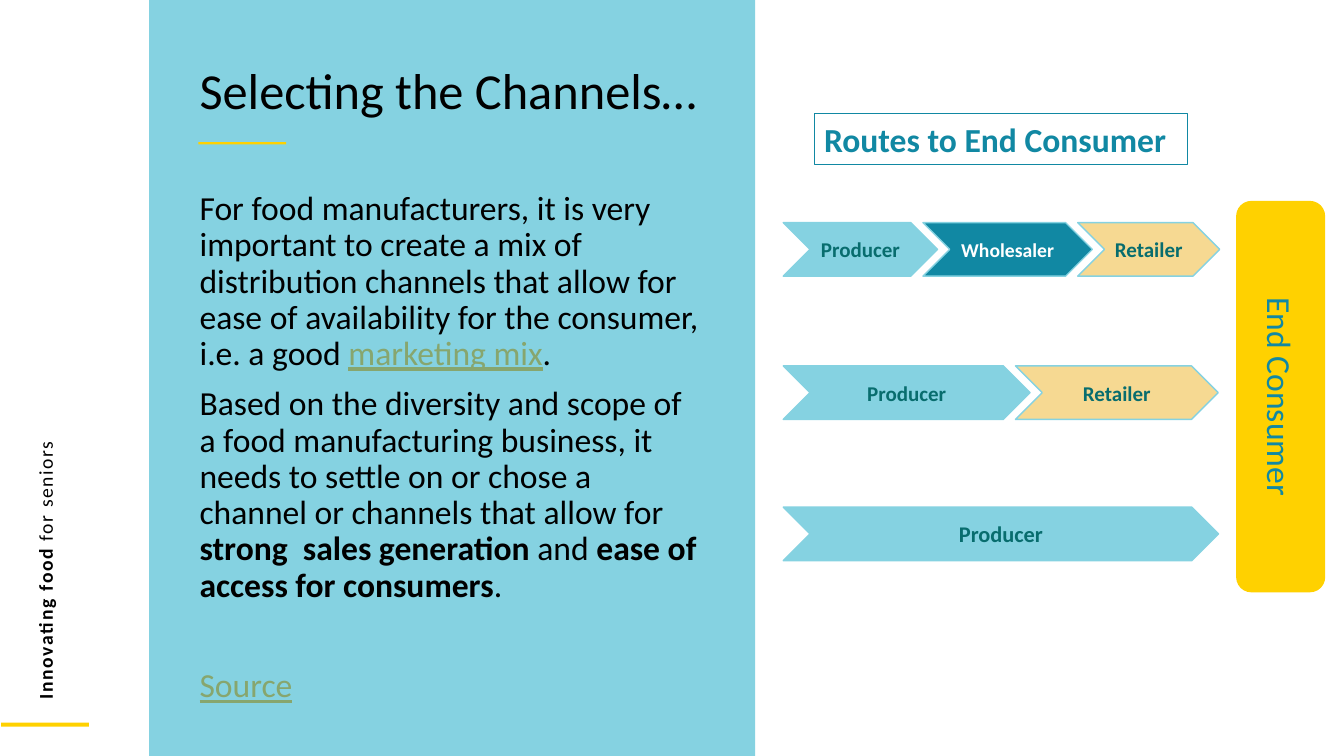
from typing import NamedTuple

from pptx import Presentation
from pptx.dml.color import RGBColor
from pptx.enum import shapes, text
from pptx.util import Cm, Pt

HUES = {
    "sky": "85D2E1", "gold": "FFD100", "sand": "F6D992", "blue": "1188A3",
    "teal": "086D6E", "link": "87A66E", "black": "000000", "white": "FFFFFF",
}
KINDS = shapes.MSO_SHAPE
MID, TOP = text.MSO_ANCHOR.MIDDLE, text.MSO_ANCHOR.TOP
LEFT, CENTER = text.PP_ALIGN.LEFT, text.PP_ALIGN.CENTER


class Box(NamedTuple):
    """Place and size in centimetres."""
    x: float
    y: float
    w: float
    h: float


class Run(NamedTuple):
    words: str
    size: float
    hue: str = "black"
    bold: bool = False
    line: bool = False
    gap: int = 0


class Step(NamedTuple):
    """One chevron of a route."""
    wide: float
    fill: str
    label: Run


class Route(NamedTuple):
    top: float
    steps: list[Step]


def color(name: str) -> RGBColor:
    return RGBColor.from_string(HUES[name])


def place(box: Box) -> list[Cm]:
    return [Cm(side) for side in box]


def write(para, runs: list[Run]) -> None:
    for item in runs:
        run = para.add_run()
        run.text = item.words
        font = run.font
        font.name, font.size, font.bold = "Calibri", Pt(item.size), item.bold
        font.underline = item.line
        font.color.rgb = color(item.hue)
        if item.gap:
            run._r.get_or_add_rPr().set("spc", str(item.gap))


def draw(slide, kind, box: Box, fill: str | None, edge: str | None = None,
         width: float = 1, runs: list[Run] | None = None,
         align=CENTER, anchor=MID):
    """Add a preset shape; no fill or edge name leaves that part clear."""
    shape = slide.shapes.add_shape(kind, *place(box))
    shape.shadow.inherit = False
    if fill:
        shape.fill.solid()
        shape.fill.fore_color.rgb = color(fill)
    else:
        shape.fill.background()
    if edge:
        shape.line.color.rgb = color(edge)
        shape.line.width = Pt(width)
    else:
        shape.line.fill.background()
    if runs:
        shape.text_frame.vertical_anchor = anchor
        para = shape.text_frame.paragraphs[0]
        para.alignment = align
        write(para, runs)
    return shape


def add_text(slide, box: Box, paras: list[list[Run]], pitch: float = 1,
             gaps: tuple[float, ...] = (0,)):
    """Add a text box; gaps holds the space before each paragraph."""
    shape = slide.shapes.add_textbox(*place(box))
    frame = shape.text_frame
    frame.word_wrap = True
    for spot, (runs, gap) in enumerate(zip(paras, gaps)):
        para = frame.add_paragraph() if spot else frame.paragraphs[0]
        para.line_spacing = pitch
        para.space_before = Pt(gap)
        write(para, runs)
    return shape


def draw_route(slide, route: Route, left: float = 19.74,
               lap: float = 0.37) -> None:
    """Chain the chevrons, each one lapping over the one before."""
    for step in route.steps:
        box = Box(left, route.top, step.wide, 1.35)
        draw(slide, KINDS.CHEVRON, box, step.fill, "sky", runs=[step.label])
        left += step.wide - lap


BARS = [
    (Box(3.76, 0, 15.27, 19.05), "sky"),
    (Box(0.03, 18.21, 2.21, 0.1), "gold"),
    (Box(5, 3.58, 2.21, 0.06), "gold"),
]
BODY = [
    [
        Run("For food manufacturers, it is very important to create a mix of "
            "distribution channels that allow for ease of availability for "
            "the consumer, i.e. a good\u00a0", 24),
        Run("marketing mix", 24, "link", line=True),
        Run(".", 24),
    ],
    [
        Run("Based on the diversity and scope of a food manufacturing "
            "business, it needs to settle on or chose a channel or channels "
            "that allow for ", 24),
        Run("strong  sales generation", 24, bold=True),
        Run(" and ", 24),
        Run("ease of access for consumers", 24, bold=True),
        Run(".", 24),
    ],
    [Run("Source", 24, "link", line=True)],
]
MAKER = Run("Producer", 15, "teal", True)
SHOP = Run("Retailer", 15, "teal", True)
ROUTES = [
    Route(5.61, [
        Step(3.89, "sky", MAKER),
        Step(4.27, "blue", Run("Wholesaler", 14, "white", True)),
        Step(3.58, "sand", SHOP),
    ]),
    Route(9.22, [Step(6.22, "sky", MAKER), Step(5.11, "sand", SHOP)]),
    Route(12.78, [Step(10.97, "sky", MAKER._replace(size=16))]),
]


def main() -> None:
    deck = Presentation()
    deck.slide_width, deck.slide_height = Cm(33.87), Cm(19.05)
    slide = deck.slides.add_slide(deck.slide_layouts[6])

    for box, fill in BARS:
        draw(slide, KINDS.RECTANGLE, box, fill)
    motto = add_text(slide, Box(-8.43, 7.87, 19.15, 0.86), [[
        Run("Innovating food ", 14, bold=True, gap=110),
        Run("for seniors", 14, gap=110),
    ]])
    motto.rotation = 270

    add_text(slide, Box(4.78, 1.65, 13.1, 1.63),
             [[Run("Selecting the Channels…", 36)]], 0.8)
    add_text(slide, Box(4.78, 4.7, 13.1, 13.59), BODY, 0.9, (0, 10, 46))

    for route in ROUTES:
        draw_route(slide, route)
    goal = draw(slide, KINDS.ROUNDED_RECTANGLE, Box(31.17, 5.08, 2.21, 9.83),
                "gold", "gold", runs=[Run("End Consumer", 24, "blue")])
    goal.text_frame._txBody.bodyPr.set("vert", "vert")
    draw(slide, KINDS.RECTANGLE, Box(20.52, 2.87, 9.42, 1.27), None, "blue",
         0.75, [Run("Routes to End Consumer", 24, "blue", True)], LEFT, TOP)

    deck.save("out.pptx")


if __name__ == "__main__":
    main()
